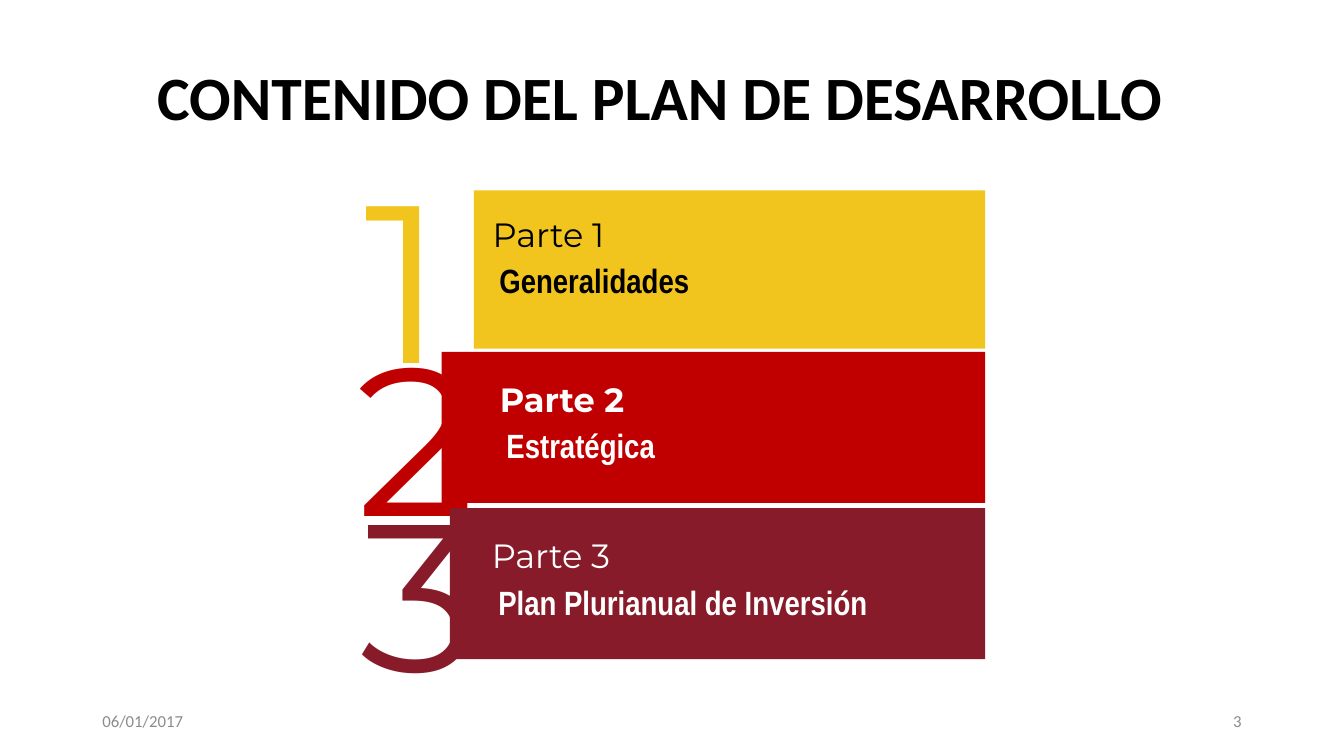
import pptx
import pptx.dml.color
import pptx.enum.shapes
import pptx.enum.text
import pptx.util

Pt = pptx.util.Pt
RGBColor = pptx.dml.color.RGBColor
ALIGN = pptx.enum.text.PP_ALIGN
ANCHOR = pptx.enum.text.MSO_ANCHOR

YELLOW = RGBColor(0xF2, 0xC5, 0x1E)
RED = RGBColor(0xC0, 0x00, 0x00)
MAROON = RGBColor(0x87, 0x1B, 0x2A)
BLACK = RGBColor(0x00, 0x00, 0x00)
WHITE = RGBColor(0xFF, 0xFF, 0xFF)
GRAY = RGBColor(0x8C, 0x8C, 0x8C)

PANEL_RIGHT = 703.7


class Page:
    """Draws styled elements on one slide; lengths are in points."""

    heading_font = "Calibri"
    label_font = "Montserrat"
    topic_font = "Arial Narrow"

    def __init__(self, deck):
        self.slide = deck.slides.add_slide(deck.slide_layouts[5])

    def set_text(self, shape, text, size, font, color, bold=False,
                 align=ALIGN.LEFT, anchor=ANCHOR.TOP):
        frame = shape.text_frame
        frame.text = text
        frame.word_wrap = True
        frame.auto_size = pptx.enum.text.MSO_AUTO_SIZE.NONE
        frame.vertical_anchor = anchor
        para = frame.paragraphs[0]
        para.alignment = align
        span = para.runs[0].font
        span.size, span.name, span.bold = Pt(size), font, bold
        span.color.rgb = color

    def title(self, left, top, width, height, text):
        box = self.slide.shapes.title
        box.left, box.top = Pt(left), Pt(top)
        box.width, box.height = Pt(width), Pt(height)
        self.set_text(box, text, 44, self.heading_font, BLACK, bold=True)

    def text(self, left, top, width, height, text, size, font, color, **style):
        box = self.slide.shapes.add_textbox(
            Pt(left), Pt(top), Pt(width), Pt(height))
        self.set_text(box, text, size, font, color, **style)

    def panel(self, left, top, width, height, color):
        box = self.slide.shapes.add_shape(
            pptx.enum.shapes.MSO_SHAPE.RECTANGLE,
            Pt(left), Pt(top), Pt(width), Pt(height))
        box.shadow.inherit = False
        box.fill.solid()
        box.fill.fore_color.rgb = color
        box.line.fill.background()

    def footer(self, left, text, align):
        self.text(left, 500.5, 216, 28.75, text, 12, self.heading_font, GRAY,
                  align=align, anchor=ANCHOR.MIDDLE)


def main():
    deck = pptx.Presentation()
    deck.slide_width, deck.slide_height = Pt(960), Pt(540)
    page = Page(deck)

    page.title(105, 38.2, 745, 60.5, "CONTENIDO DEL PLAN DE DESARROLLO")

    # Parts: number, topic, panel (left, top, height), fill, text colour,
    # digit (left, top, size), label (left, top), bold label
    parts = [
        ("1", "Generalidades", (338.4, 136, 113), YELLOW, BLACK,
         (253.4, 95.8, 160), (344.9, 149), False),
        ("2", "Estratégica", (315.4, 251.3, 108), RED, WHITE,
         (247.7, 215.3, 150), (350, 267.1), True),
        ("3", "Plan Plurianual de Inversión", (321.3, 362.9, 108), MAROON,
         WHITE, (250.6, 326.9, 150), (344.2, 378.7), False),
    ]
    for number, topic, panel, fill, ink, digit, label, bold in parts:
        left, top, height = panel
        page.panel(left, top, PANEL_RIGHT - left, height, fill)
        left, top, size = digit
        page.text(left, top, 115, 190, number, size, page.label_font, fill)
        left, top = label
        page.text(left, top, 354, 36, f"Parte {number}", 24,
                  page.label_font, ink, bold=bold)
        page.text(left + 4.7, top + 33.1, 335, 36, topic, 24,
                  page.topic_font, ink, bold=True)

    # Footer: date and slide number
    page.footer(66, "06/01/2017", ALIGN.LEFT)
    page.footer(678, "3", ALIGN.RIGHT)

    deck.save("out.pptx")


if __name__ == "__main__":
    main()
